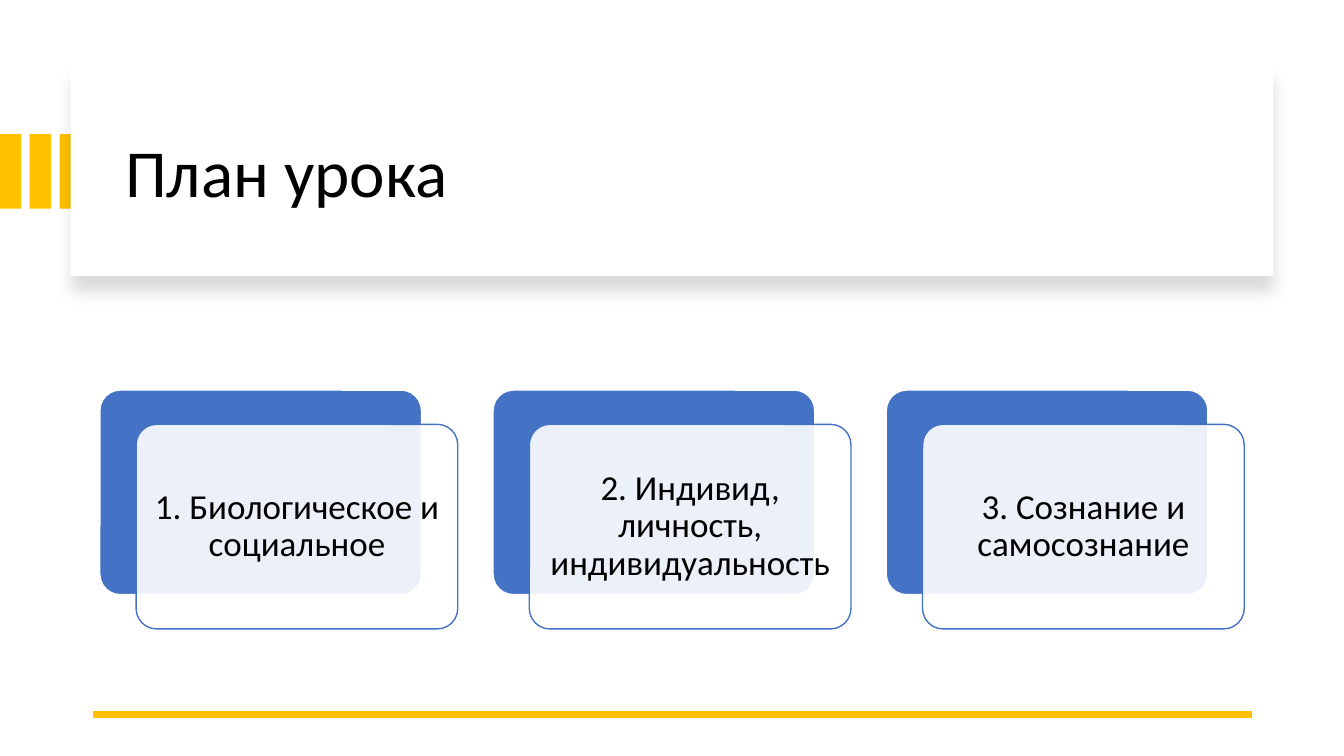
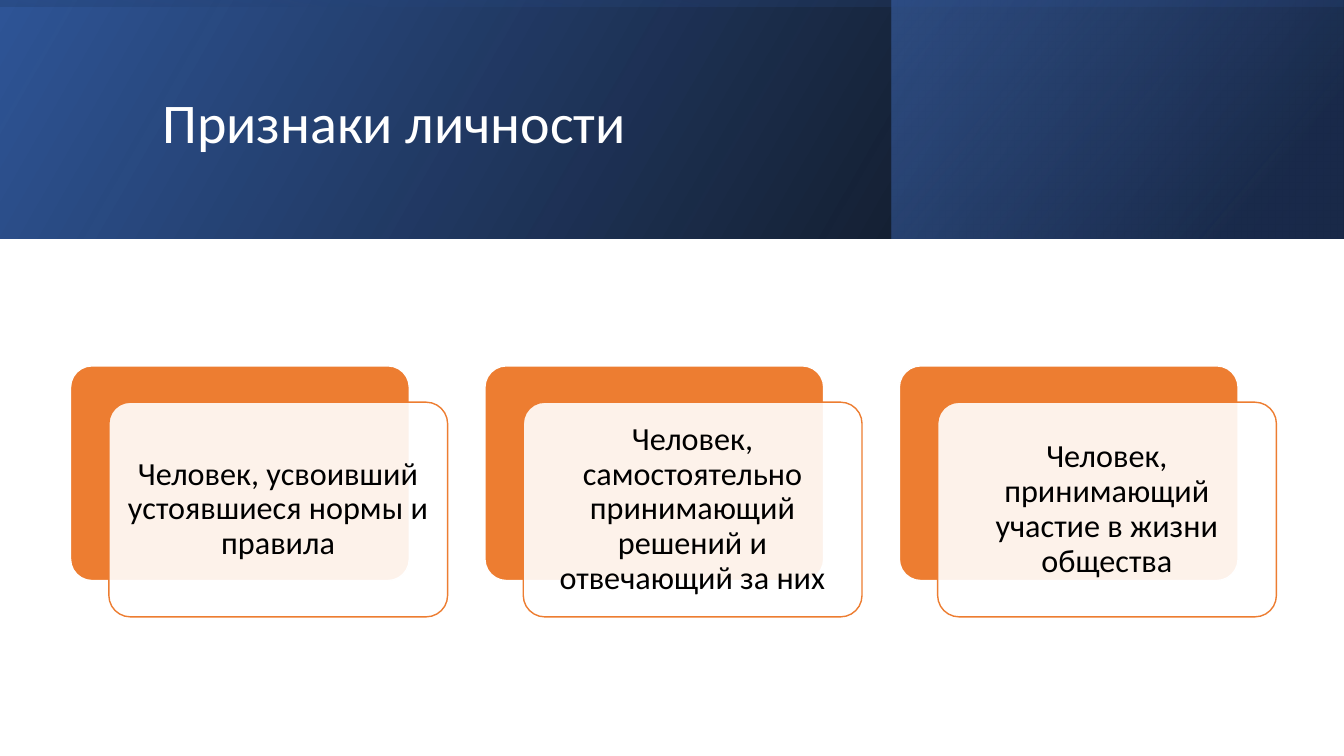
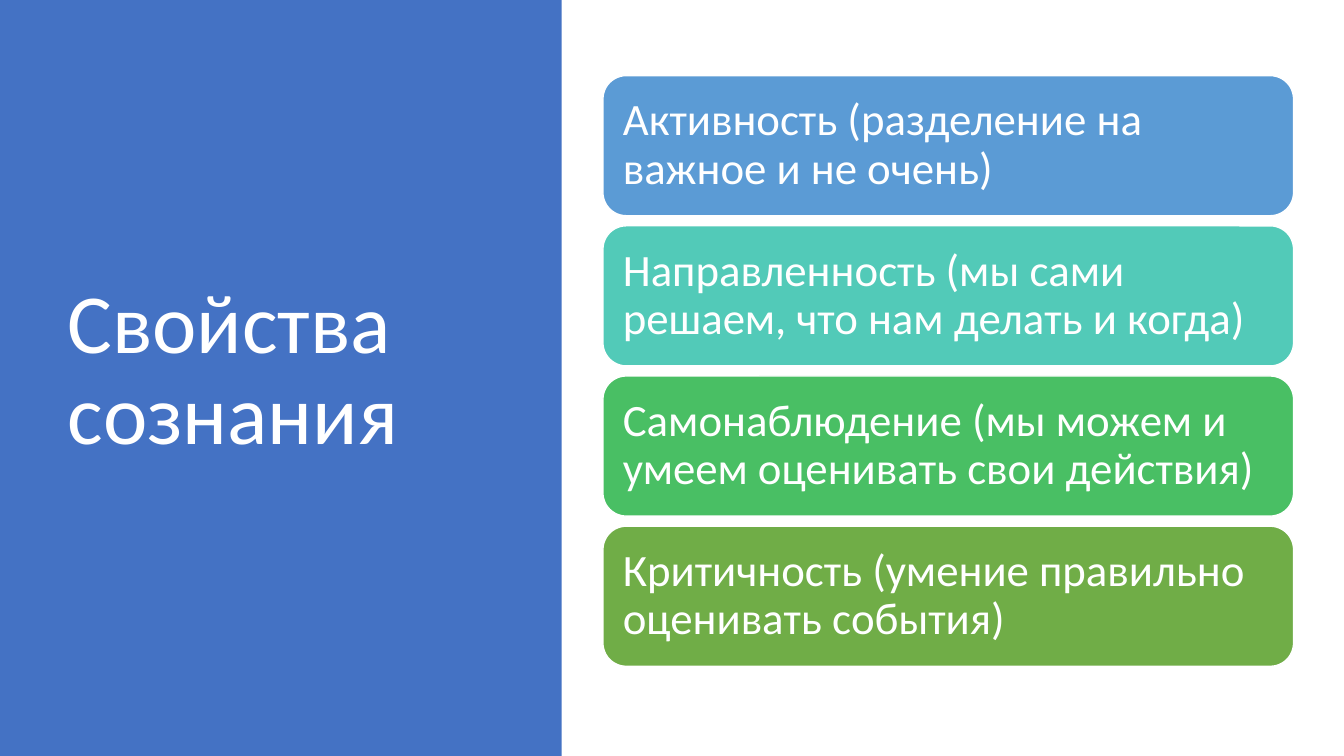
"""Build a three-slide lesson deck on personality and consciousness."""
from dataclasses import dataclass

from lxml.etree import SubElement
from pptx import Presentation
from pptx.dml.color import RGBColor
from pptx.enum.shapes import MSO_CONNECTOR as Connector, MSO_SHAPE as Shape
from pptx.enum.text import MSO_ANCHOR as Anchor, MSO_AUTO_SIZE as AutoSize, PP_ALIGN as Align
from pptx.oxml.ns import qn
from pptx.util import Inches, Pt


@dataclass(frozen=True)
class Theme:
    font: str = "Calibri"
    black: str = "000000"
    white: str = "FFFFFF"
    gold: str = "FFC000"
    blue: str = "4472C4"
    deep_blue: str = "2F5597"
    navy: str = "203864"
    orange: str = "ED7D31"
    property_fills: tuple = ("5B9BD5", "52CAB8", "49BF64", "70AD47")
    plan_title: int = 48
    traits_title: int = 40
    properties_title: int = 60
    plan_text: int = 25
    traits_text: int = 23
    properties_text: int = 32


THEME = Theme()
WIDTH, HEIGHT = 13.33, 7.5
BAND_HEIGHT = 2.37

PLAN = [
    "1. Биологическое и социальное",
    "2. Индивид, личность, индивидуальность",
    "3. Сознание и самосознание",
]
TRAITS = [
    "Человек, усвоивший устоявшиеся нормы и правила",
    "Человек, самостоятельно принимающий решений и отвечающий за них",
    "Человек, принимающий участие в жизни общества",
]
PROPERTIES = [
    "Активность (разделение на важное и не очень)",
    "Направленность (мы сами решаем, что нам делать и когда)",
    "Самонаблюдение (мы можем и умеем оценивать свои действия)",
    "Критичность (умение правильно оценивать события)",
]
BAND_LAYERS = [
    dict(at=(0, 0, WIDTH, BAND_HEIGHT), rotation=0, angle=330,
         stops=[(0, THEME.black, 96), (100, THEME.deep_blue, 100)]),
    dict(at=(8.84, 0, 4.48, BAND_HEIGHT), rotation=0, angle=320,
         stops=[(19, THEME.navy, 68), (100, THEME.blue, 48)]),
    dict(at=(5.48, -5.48, BAND_HEIGHT, WIDTH), rotation=270, angle=350,
         stops=[(23, THEME.deep_blue, 16), (99, THEME.black, 45)]),
]


def rgb(color):
    return RGBColor.from_string(color)


def set_alphas(shape, *percents):
    colors = shape.element.spPr.iter(qn("a:srgbClr"))
    for color, percent in zip(colors, percents):
        if percent < 100:
            SubElement(color, qn("a:alpha"), val=str(percent * 1000))


def add_box(page, at, fill=None, line=None, kind=Shape.RECTANGLE, corner=None):
    box = page.shapes.add_shape(kind, *map(Inches, at))
    box.shadow.inherit = False
    if corner is not None:
        box.adjustments[0] = corner
    if fill:
        box.fill.solid()
        box.fill.fore_color.rgb = rgb(fill)
    if line:
        box.line.color.rgb = rgb(line)
        box.line.width = Pt(1)
    else:
        box.line.fill.background()
    return box


def write(box, text, size, color, inset, align=Align.LEFT):
    frame = box.text_frame
    frame.word_wrap = True
    frame.auto_size = AutoSize.NONE
    frame.vertical_anchor = Anchor.MIDDLE
    frame.margin_left = frame.margin_right = Inches(inset)
    frame.margin_top = frame.margin_bottom = Inches(min(inset, 0.13))
    para = frame.paragraphs[0]
    para.alignment = align
    para.line_spacing = 0.9
    span = para.add_run()
    span.text = text
    span.font.name = THEME.font
    span.font.size = Pt(size)
    span.font.color.rgb = rgb(color)


def place_title(page, text, at, size, color):
    title = page.shapes.title
    title.left, title.top, title.width, title.height = map(Inches, at)
    write(title, text, size, color, 0.1)
    title.element.getparent().append(title.element)


def add_cards(page, texts, start, card, pitch, offset, color, size):
    left, top = start
    for index, text in enumerate(texts):
        x = left + index * pitch
        add_box(page, (x, top, *card), color, THEME.white, Shape.ROUNDED_RECTANGLE, 0.1)
        front = add_box(page, (x + offset[0], top + offset[1], *card),
                        THEME.white, color, Shape.ROUNDED_RECTANGLE, 0.1)
        set_alphas(front, 90)
        write(front, text, size, THEME.black, 0.1, Align.CENTER)


def add_drop_shadow(box):
    effects = box.element.spPr.find(qn("a:effectLst"))
    shadow = SubElement(effects, qn("a:outerShdw"), blurRad=str(Pt(11)), dist=str(Pt(10)),
                        dir=str(90 * 60000), algn="t", rotWithShape="0")
    color = SubElement(shadow, qn("a:srgbClr"), val=THEME.black)
    SubElement(color, qn("a:alpha"), val="15000")


def add_band_layer(page, at, rotation, angle, stops):
    layer = add_box(page, at)
    layer.rotation = rotation
    layer.element.spPr.find(qn("a:xfrm")).set("flipH", "1")
    layer.fill.gradient()
    layer.fill.gradient_angle = 360 - angle
    for stop, (position, color, _) in zip(layer.fill.gradient_stops, stops):
        stop.position = position / 100
        stop.color.rgb = rgb(color)
    set_alphas(layer, *(alpha for _, _, alpha in stops))


def build_plan(page):
    for index in range(3):
        add_box(page, (index * 0.59 / 2, 1.33, 0.21, 0.74), THEME.gold)
    add_drop_shadow(add_box(page, (0.7, 0.67, 11.93, 2.07), THEME.white))
    place_title(page, "План урока", (1.14, 0.89, 11.13, 1.7), THEME.plan_title, THEME.black)
    rule = page.shapes.add_connector(
        Connector.STRAIGHT, *map(Inches, (12.42, 7.09, 0.92, 7.09)))
    rule.line.color.rgb = rgb(THEME.gold)
    rule.line.width = Pt(4.5)
    SubElement(rule.element.spPr, qn("a:effectLst"))
    add_cards(page, PLAN, (0.99, 3.87), (3.19, 2.03), 3.9, (0.36, 0.34),
              THEME.blue, THEME.plan_text)


def build_traits(page):
    for layer in BAND_LAYERS:
        add_band_layer(page, **layer)
    place_title(page, "Признаки личности", (1.51, 0.38, 10.63, 1.72),
                THEME.traits_title, THEME.white)
    add_cards(page, TRAITS, (0.7, 3.63), (3.36, 2.13), 4.11, (0.38, 0.36),
              THEME.orange, THEME.traits_text)


def build_properties(page):
    add_box(page, (0, 0, 5.57, HEIGHT), THEME.blue)
    place_title(page, "Свойства сознания", (0.57, 0.68, 4.16, 6.02),
                THEME.properties_title, THEME.white)
    for index, (text, fill) in enumerate(zip(PROPERTIES, THEME.property_fills)):
        row = add_box(page, (5.98, 0.75 + index * 1.49, 6.85, 1.39),
                      fill, THEME.white, Shape.ROUNDED_RECTANGLE)
        write(row, text, THEME.properties_text, THEME.white, 0.13)


def main():
    deck = Presentation()
    deck.slide_width, deck.slide_height = Inches(WIDTH), Inches(HEIGHT)
    for build in (build_plan, build_traits, build_properties):
        build(deck.slides.add_slide(deck.slide_layouts[5]))
    deck.save("out.pptx")


if __name__ == "__main__":
    main()
